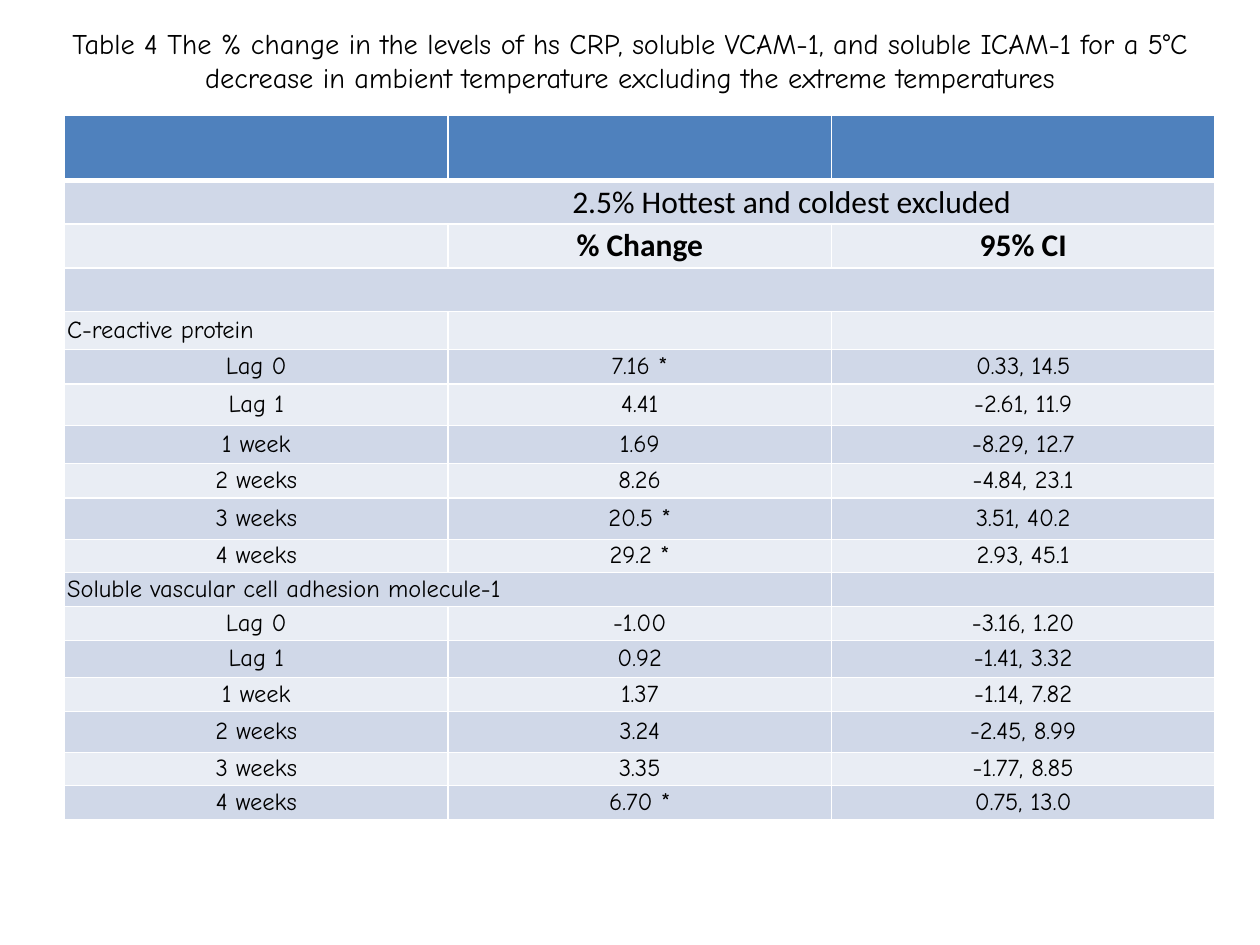
from dataclasses import dataclass

from lxml.etree import SubElement
from pptx import Presentation
from pptx.dml.color import RGBColor
from pptx.enum.text import MSO_ANCHOR, MSO_AUTO_SIZE, PP_ALIGN
from pptx.oxml.ns import qn
from pptx.table import Table, _Cell
from pptx.text.text import _Paragraph
from pptx.util import Pt

HEX = {"head": "4F81BD", "dark": "D0D8E8", "light": "E9EDF4",
       "line": "FFFFFF", "text": "000000"}
BODY = {"name": "Comic Neue", "size": Pt(14), "bold": False}
PLAIN = {"name": "Calibri", "size": Pt(18), "bold": False}
STRONG = PLAIN | {"bold": True}
TITLE = BODY | {"size": Pt(16.2)}
PAD = 1.44
SHIFT = 175
SIDES = ("L", "R", "T", "B")


@dataclass
class Row:
    height: float
    texts: tuple = ("", "", "")
    font: dict = None
    align: PP_ALIGN = PP_ALIGN.CENTER
    span: int = 1
    indent: float = PAD


def group(name: str, height: float, span: int) -> Row:
    return Row(height, (name, "", ""), BODY, PP_ALIGN.LEFT, span)


ROWS = [
    Row(37.4),
    Row(24.9, ("2.5% Hottest and coldest excluded", "", ""), PLAIN,
        span=3, indent=SHIFT),
    Row(25.1, ("", "% Change", "95% CI"), STRONG),
    Row(24.9, span=3),
    group("C-reactive protein", 21.7, 1),
    Row(19.7, ("Lag 0", "7.16 *", "0.33, 14.5")),
    Row(23.7, ("Lag 1", "4.41", "-2.61, 11.9")),
    Row(21.7, ("1 week", "1.69", "-8.29, 12.7")),
    Row(19.7, ("2 weeks", "8.26", "-4.84, 23.1")),
    Row(23.7, ("3 weeks", "20.5 *", "3.51, 40.2")),
    Row(19.1, ("4 weeks", "29.2 *", "2.93, 45.1")),
    group("Soluble vascular cell adhesion molecule-1", 19.4, 2),
    Row(19.4, ("Lag 0", "-1.00", "-3.16, 1.20")),
    Row(21.1, ("Lag 1", "0.92", "-1.41, 3.32")),
    Row(19.4, ("1 week", "1.37", "-1.14, 7.82")),
    Row(23.4, ("2 weeks", "3.24", "-2.45, 8.99")),
    Row(19.1, ("3 weeks", "3.35", "-1.77, 8.85")),
    Row(19.7, ("4 weeks", "6.70 *", "0.75, 13.0")),
]


def assign(item: object, values: dict) -> None:
    for key, value in values.items():
        setattr(item, key, value)


def write(para: _Paragraph, text: str, font: dict, align: PP_ALIGN) -> None:
    para.alignment = align
    if not text:
        SubElement(para._p, qn("a:endParaRPr"), sz="1200")
        return
    run = para.add_run()
    run.text = text
    assign(run.font, font)
    run.font.color.rgb = RGBColor.from_string(HEX["text"])


def border(cell: _Cell, base: float) -> None:
    props = cell._tc.get_or_add_tcPr()
    for side in SIDES:
        width = base if side == "B" else 1
        line = SubElement(props, qn(f"a:ln{side}"), w=str(Pt(width)))
        fill = SubElement(line, qn("a:solidFill"))
        SubElement(fill, qn("a:srgbClr"), val=HEX["line"])


def draw(table: Table, index: int, row: Row) -> None:
    table.rows[index].height = Pt(row.height)
    if row.span > 1:
        table.cell(index, 0).merge(table.cell(index, row.span - 1))
    shade = "head" if index == 0 else "dark" if index % 2 else "light"
    for col, text in enumerate(row.texts):
        cell = table.cell(index, col)
        border(cell, 3 if index == 0 else 1)
        cell.fill.solid()
        cell.fill.fore_color.rgb = RGBColor.from_string(HEX[shade])
        assign(cell, {
            "margin_left": Pt(row.indent), "margin_right": Pt(PAD),
            "margin_top": Pt(PAD), "margin_bottom": Pt(PAD),
            "vertical_anchor": MSO_ANCHOR.MIDDLE,
        })
        write(cell.text_frame.paragraphs[0], text, row.font or BODY, row.align)


def main() -> None:
    deck = Presentation()
    assign(deck, {"slide_width": Pt(720), "slide_height": Pt(540)})
    slide = deck.slides.add_slide(deck.slide_layouts[5])

    title = slide.shapes.title
    assign(title, {"left": Pt(8.6), "top": Pt(9.4),
                   "width": Pt(702.7), "height": Pt(49.7)})
    frame = title.text_frame
    assign(frame, {"word_wrap": True, "auto_size": MSO_AUTO_SIZE.NONE,
                   "vertical_anchor": MSO_ANCHOR.MIDDLE})
    write(frame.paragraphs[0],
          "Table 4 The % change in the levels of hs CRP, soluble VCAM-1, and "
          "soluble ICAM-1 for a 5°C decrease in ambient temperature excluding "
          "the extreme temperatures", TITLE, PP_ALIGN.CENTER)

    total = sum(row.height for row in ROWS)
    table = slide.shapes.add_table(
        len(ROWS), 3, Pt(36.9), Pt(65.8), Pt(657.4), Pt(total)).table
    for index, row in enumerate(ROWS):
        draw(table, index, row)
    deck.save("out.pptx")


if __name__ == "__main__":
    main()
